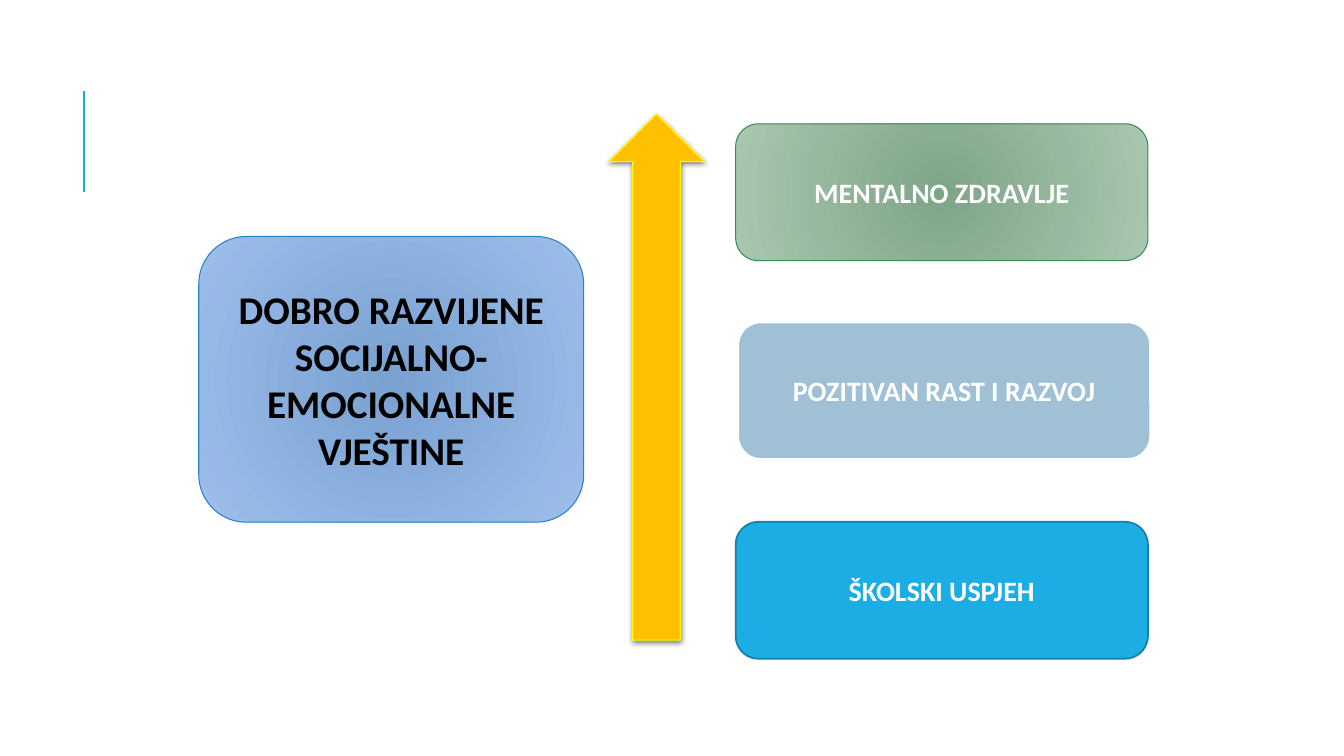
from lxml.etree import SubElement
from pptx import Presentation
from pptx.dml.color import RGBColor
from pptx.enum.shapes import MSO_CONNECTOR as Connector, MSO_SHAPE as Preset
from pptx.enum.text import MSO_ANCHOR as Anchor, PP_ALIGN as Align
from pptx.oxml import parse_xml
from pptx.oxml.ns import nsdecls, qn
from pptx.util import Cm, Pt

COLOURS = {
    "accent": "1CADE4",
    "accent_edge": "1580A9",
    "arrow": "FFC000",
    "arrow_edge": "FFFF00",
    "skills_inner": "79A1D1",
    "skills_outer": "9EBEEB",
    "skills_edge": "2683C6",
    "health_inner": "7FA587",
    "health_outer": "A9C7AF",
    "health_edge": "3E8853",
    "growth": "A0C1D5",
    "white": "FFFFFF",
    "black": "000000",
}
OUTCOME_SIZE = (10.39, 3.45)


def colour(name):
    return RGBColor.from_string(COLOURS[name])


def set_radial_fill(shape, inner, outer):
    shape.fill.background()
    properties = shape._element.spPr
    gradient = parse_xml(
        f'<a:gradFill {nsdecls("a")} rotWithShape="1"><a:gsLst>'
        f'<a:gs pos="0"><a:srgbClr val="{COLOURS[inner]}"/></a:gs>'
        f'<a:gs pos="100000"><a:srgbClr val="{COLOURS[outer]}"/></a:gs>'
        '</a:gsLst><a:path path="circle">'
        '<a:fillToRect l="50000" t="50000" r="50000" b="50000"/>'
        '</a:path></a:gradFill>'
    )
    properties.replace(properties.find(qn("a:noFill")), gradient)


def add_outlined(page, preset, place, fill, edge, edge_width):
    shape = page.shapes.add_shape(preset, *(Cm(length) for length in place))
    shape.shadow.inherit = False
    if len(fill) == 2:
        set_radial_fill(shape, *fill)
    else:
        shape.fill.solid()
        shape.fill.fore_color.rgb = colour(fill[0])
    shape.line.color.rgb = colour(edge)
    shape.line.width = Pt(edge_width)
    return shape


def add_box(page, text, place, fill, edge, edge_width, size=20, ink="white"):
    box = add_outlined(page, Preset.ROUNDED_RECTANGLE, place, fill, edge, edge_width)
    frame = box.text_frame
    frame.word_wrap = True
    frame.vertical_anchor = Anchor.MIDDLE
    para = frame.paragraphs[0]
    para.alignment = Align.CENTER
    run = para.add_run()
    run.text = text
    run.font.name = "Calibri"
    run.font.size = Pt(size)
    run.font.bold = True
    run.font.color.rgb = colour(ink)


def add_arrow(page):
    place = (15.34, 2.87, 2.41, 13.26)
    arrow = add_outlined(page, Preset.UP_ARROW, place, ["arrow"], "arrow_edge", 0.75)
    effects = arrow._element.spPr.find(qn("a:effectLst"))
    effects.append(parse_xml(
        f'<a:outerShdw {nsdecls("a")} blurRad="{Pt(4)}" dist="{Pt(1)}" '
        'dir="5400000" algn="ctr" rotWithShape="0">'
        f'<a:srgbClr val="{COLOURS["black"]}"><a:alpha val="50000"/></a:srgbClr>'
        '</a:outerShdw>'
    ))


def add_accent_line(page):
    line = page.shapes.add_connector(
        Connector.STRAIGHT, Cm(2.12), Cm(4.83), Cm(2.12), Cm(2.29)
    )
    line.line.color.rgb = colour("accent")
    line.line.width = Pt(1.5)
    SubElement(line._element.spPr, qn("a:effectLst"))


def main():
    deck = Presentation()
    deck.slide_width, deck.slide_height = Cm(33.87), Cm(19.05)
    page = deck.slides.add_slide(deck.slide_layouts[6])
    add_accent_line(page)
    add_arrow(page)
    add_box(page, "DOBRO RAZVIJENE SOCIJALNO-EMOCIONALNE VJEŠTINE",
            (5.01, 5.96, 9.7, 7.2), ["skills_inner", "skills_outer"],
            "skills_edge", 0.75, 28, "black")
    outcomes = [
        ("MENTALNO ZDRAVLJE", 18.54, 3.12,
         ["health_inner", "health_outer"], "health_edge", 0.75),
        ("POZITIVAN RAST I RAZVOJ", 18.6, 8.12, ["growth"], "white", 1.5),
        ("ŠKOLSKI USPJEH", 18.54, 13.15, ["accent"], "accent_edge", 1.25),
    ]
    for text, left, top, fill, edge, edge_width in outcomes:
        add_box(page, text, (left, top, *OUTCOME_SIZE), fill, edge, edge_width)
    deck.save("out.pptx")


if __name__ == "__main__":
    main()
